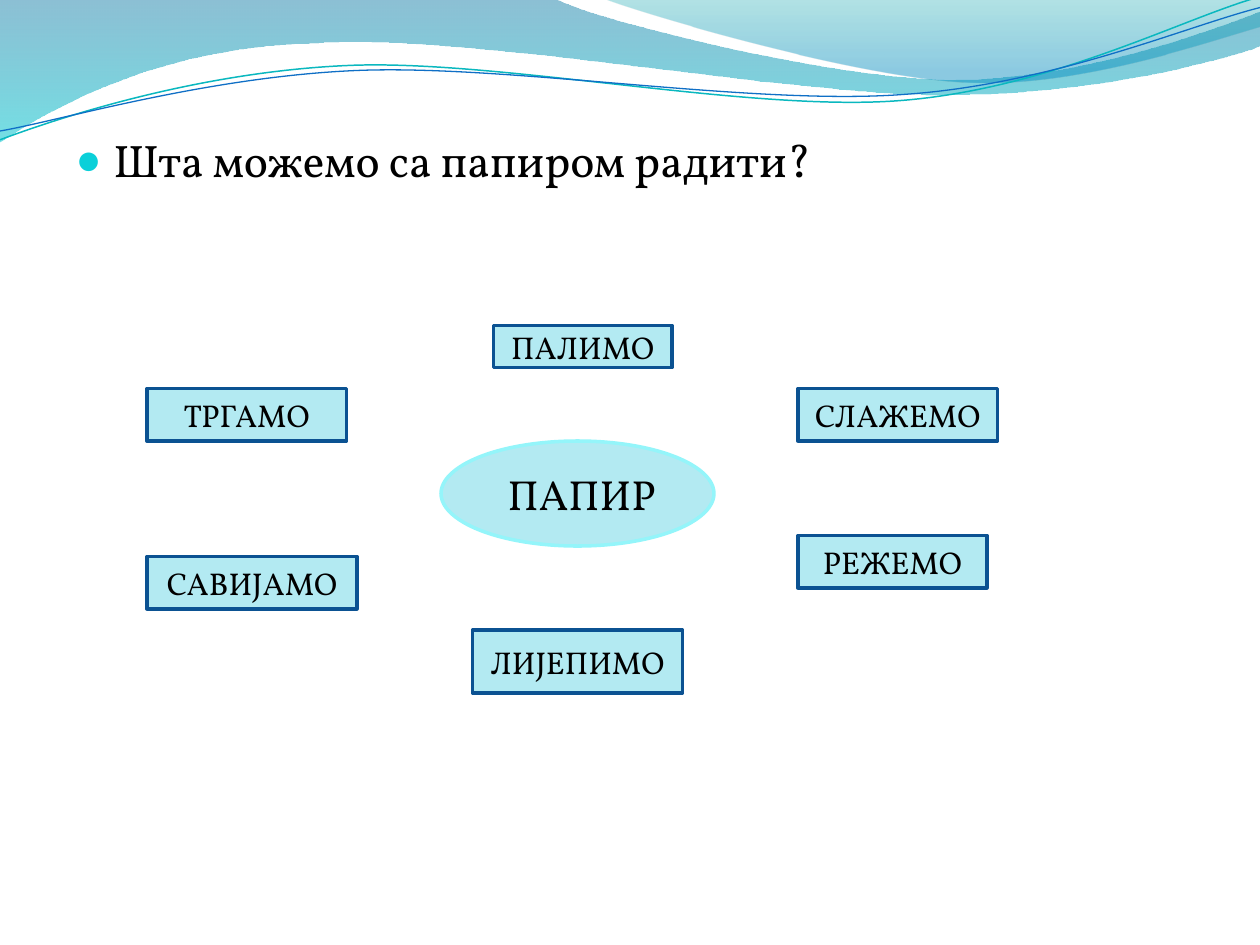
import pptx
import pptx.dml.color
import pptx.enum.shapes
import pptx.enum.text
import pptx.oxml
import pptx.oxml.ns
import pptx.util

Inches = pptx.util.Inches
Pt = pptx.util.Pt
FORM = pptx.enum.shapes.MSO_SHAPE
ALIGN = pptx.enum.text.PP_ALIGN
ANCHOR = pptx.enum.text.MSO_ANCHOR
FONT = "Vollkorn"
UNIT = 1 / 12

BANDS = [
    ([(0, 0), (4.4, -0.01), (4.76, 0.17, 6.64, 0.63, 7.58, 0.63),
      (8.53, 0.63, 9.58, 0.26, 10, 0.09), (10.01, 0.36),
      (9.83, 0.44, 8.7, 0.76, 7.46, 0.75), (6.22, 0.75, 3.82, 0.28, 2.57, 0.34),
      (1.29, 0.36, 0.46, 0.83, -0.01, 1.13), (0, 0)],
     [(0, "0074A1", 45), (1, "00C6CF", 55)]),
    ([(4.79, -0.01), (5.09, 0.11, 6.82, 0.62, 7.69, 0.65),
      (8.56, 0.69, 9.61, 0.32, 10, 0.21), (10, 0), (4.79, -0.01)],
     [(0, "00A1A9", 30), (0.8, "008BBF", 45)]),
]
CURVES = [
    ([(0, 1.11), (0.48, 0.93, 1.58, 0.57, 2.77, 0.52),
      (3.95, 0.47, 5.93, 0.89, 7.13, 0.8), (8.33, 0.71, 9.38, 0.15, 9.98, -0.02)],
     "0AB8BF", 0.85),
    ([(0, 1.04), (0.47, 0.96, 1.64, 0.61, 2.83, 0.56),
      (4.03, 0.51, 5.97, 0.84, 7.17, 0.75), (8.36, 0.67, 9.41, 0.21, 10, 0.06)],
     "0F6FC6", 0.75),
]
LABELS = [
    ("ПАЛИМО", 33, 0, 17, 4),
    ("СЛАЖЕМО", 62, 6, 19, 5),
    ("САВИЈАМО", 0, 22, 20, 5),
    ("ТРГАМО", 0, 6, 19, 5),
    ("РЕЖЕМО", 62, 20, 18, 5),
    ("ЛИЈЕПИМО", 31, 29, 20, 6),
]


def tint(code):
    """Turn a hex string into a colour."""
    return pptx.dml.color.RGBColor.from_string(code)


def make(name, child=None, **attrs):
    """Make a drawing element with attributes and an optional child."""
    node = pptx.oxml.parse_xml(f'<a:{name} {pptx.oxml.ns.nsdecls("a")}/>')
    for key, value in attrs.items():
        node.set(key, str(value))
    if child is not None:
        node.append(child)
    return node


def write(frame, text, size=18, color="000000", align=ALIGN.CENTER, anchor=ANCHOR.MIDDLE):
    """Put formatted text into a frame and return its paragraph."""
    frame.word_wrap = True
    frame.vertical_anchor = anchor
    para = frame.paragraphs[0]
    para.alignment = align
    para.space_before = Pt(0)
    run = para.add_run()
    run.text = text
    run.font.name = FONT
    run.font.size = Pt(size)
    run.font.color.rgb = tint(color)
    return para


def outline(slide, box, path, close):
    """Draw lines and cubic curves placed from the corner of a box."""
    left, top = box
    points = [(Inches(left + part[i]), Inches(top + part[i + 1]))
              for part in path for i in range(0, len(part), 2)]
    build = slide.shapes.build_freeform(*points[0], scale=1.0)
    build.add_line_segments(points[1:], close=close)
    shape = build.convert_to_shape()
    shape.shadow.inherit = False
    lines = iter(list(shape.element.iter(pptx.oxml.ns.qn("a:lnTo"))))
    for part in path[1:]:
        group = [next(lines) for _ in range(len(part) // 2)]
        if len(group) == 3:
            curve = make("cubicBezTo")
            group[0].addprevious(curve)
            for line in group:
                curve.append(line[0])
                line.getparent().remove(line)
    return shape


def add_waves(slide, box):
    """Draw the shaded bands and thin curves of the header."""
    for path, stops in BANDS:
        band = outline(slide, box, path, True)
        band.line.fill.background()
        band.fill.gradient()
        band.fill.gradient_angle = 270
        for stop, (place, code, _) in zip(band.fill.gradient_stops, stops):
            stop.position = place
            stop.color.rgb = tint(code)
        marks = band.element.spPr.iter(pptx.oxml.ns.qn("a:srgbClr"))
        for mark, (_, _, alpha) in zip(marks, stops):
            mark.append(make("alpha", val=alpha * 1000))
    for path, code, width in CURVES:
        curve = outline(slide, box, path, False)
        curve.fill.background()
        curve.line.color.rgb = tint(code)
        curve.line.width = Pt(width)


def add_body(slide, box):
    """Fill the body placeholder with the bulleted question."""
    body = slide.placeholders[1]
    body.left, body.top, body.width, body.height = map(Inches, box)
    frame = body.text_frame
    frame.auto_size = pptx.enum.text.MSO_AUTO_SIZE.NONE
    para = write(frame, "Шта можемо са папиром радити?", size=26,
                 align=ALIGN.LEFT, anchor=ANCHOR.TOP)
    props = para._p.get_or_add_pPr()
    props.set("marL", str(Inches(0.3)))
    props.set("indent", str(Inches(-0.3)))
    props.append(make("buClr", make("srgbClr", val="0BD0D9")))
    props.append(make("buSzPct", val=95000))
    props.append(make("buFont", typeface="Arial"))
    props.append(make("buChar", char="●"))
    slide.shapes.element.append(body.element)


def add_node(slide, form, text, box, line, size=18):
    """Add one filled shape with a centred word."""
    node = slide.shapes.add_shape(form, *map(Inches, box))
    node.shadow.inherit = False
    node.fill.solid()
    node.fill.fore_color.rgb = tint("B3EAF2")
    node.line.color.rgb = tint(line)
    node.line.width = Pt(2)
    write(node.text_frame, text, size=size)


def add_map(slide, box):
    """Place the central word and the actions around it on a grid."""
    left, top = box

    def cell(x, y, width, height):
        """Turn grid units into a box in inches."""
        return left + x * UNIT, top + y * UNIT, width * UNIT, height * UNIT

    add_node(slide, FORM.OVAL, " ПАПИР", cell(28, 11, 26, 10), "94F5FA", size=24)
    for text, *place in LABELS:
        add_node(slide, FORM.RECTANGLE, text, cell(*place), "0B5292")


def main():
    """Build and save the slide."""
    deck = pptx.Presentation()
    deck.slide_width, deck.slide_height = Inches(10), Inches(7.5)
    slide = deck.slides.add_slide(deck.slide_layouts[1])
    title = slide.shapes.title.element
    title.getparent().remove(title)
    add_waves(slide, (0, 0))
    add_body(slide, (0.5, 1, 9, 5.92))
    add_map(slide, (14 * UNIT, 31 * UNIT))
    deck.save("out.pptx")


if __name__ == "__main__":
    main()
